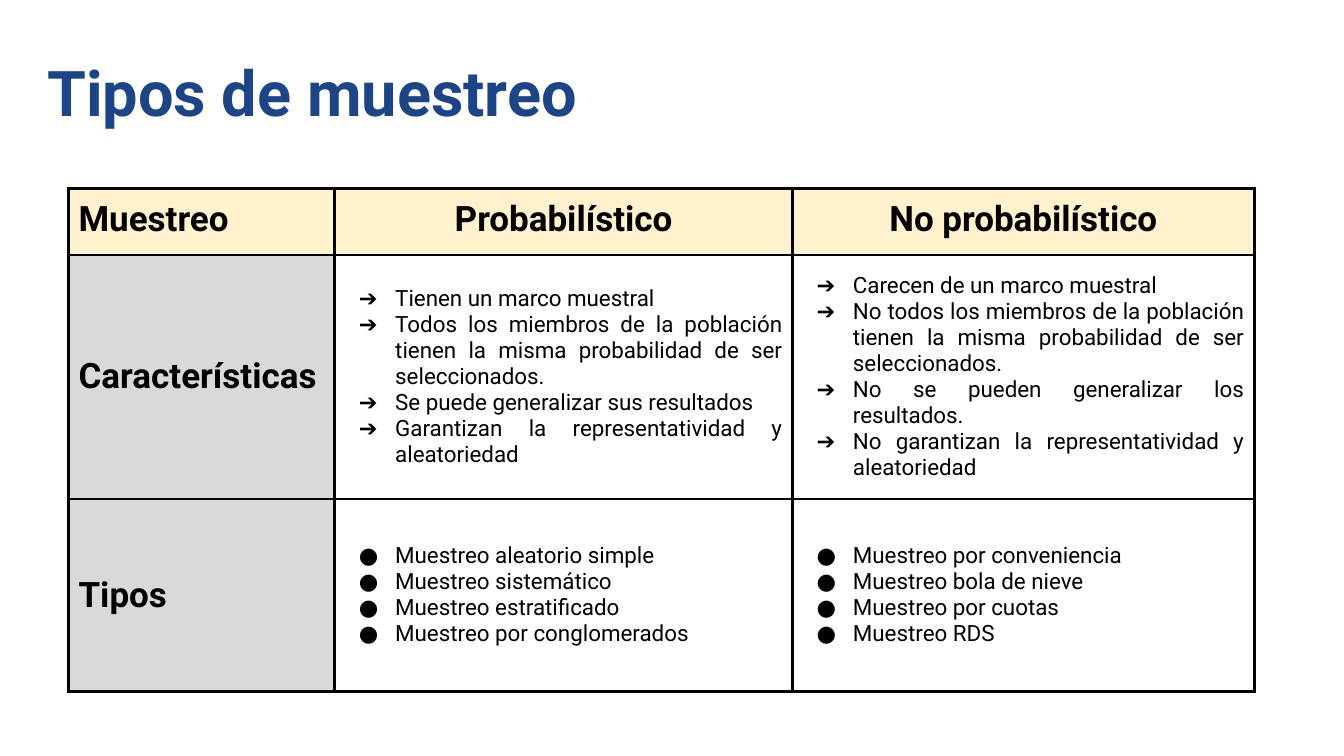
from lxml.etree import SubElement
from pptx import Presentation
from pptx.dml.color import RGBColor
from pptx.enum.text import MSO_ANCHOR, PP_ALIGN
from pptx.oxml.ns import qn
from pptx.util import Inches, Pt

BLUE = RGBColor(0x1C, 0x45, 0x87)
BLACK = RGBColor(0x00, 0x00, 0x00)
CREAM = RGBColor(0xFF, 0xF2, 0xCC)
GREY = RGBColor(0xD9, 0xD9, 0xD9)

HEADERS = ["Muestreo", "Probabilístico", "No probabilístico"]
# Each body row: label, bullet, one list of items per column
BODY = [
    ("Características", "➔", [
        ["Tienen un marco muestral",
         "Todos los miembros de la población tienen la misma probabilidad de ser seleccionados.",
         "Se puede generalizar sus resultados",
         "Garantizan la representatividad y aleatoriedad"],
        ["Carecen de un marco muestral",
         "No todos los miembros de la población tienen la misma probabilidad de ser seleccionados.",
         "No se pueden generalizar los resultados.",
         "No garantizan la representatividad y aleatoriedad"],
    ]),
    ("Tipos", "●", [
        ["Muestreo aleatorio simple", "Muestreo sistemático",
         "Muestreo estratificado", "Muestreo por conglomerados"],
        ["Muestreo por conveniencia", "Muestreo bola de nieve",
         "Muestreo por cuotas", "Muestreo RDS"],
    ]),
]
COL_WIDTHS = [2.64, 4.54, 4.58]
ROW_HEIGHTS = [0.66, 2.42, 1.91]


class SlideBuilder:
    font = "Roboto"
    margin = Inches(0.1)
    border = Pt(2.25)

    def __init__(self, s):
        self.s = s

    def set_margins(self, target):
        target.margin_left = target.margin_right = self.margin
        target.margin_top = target.margin_bottom = self.margin

    def add_run(self, p, text, size, color=BLACK, bold=False):
        r = p.add_run()
        r.text = text
        r.font.name = self.font
        r.font.size = Pt(size)
        r.font.bold = bold
        r.font.color.rgb = color

    def title(self, text, left, top, width, height):
        sp = self.s.shapes.add_textbox(Inches(left), Inches(top), Inches(width), Inches(height))
        tf = sp.text_frame
        tf.word_wrap = True
        self.set_margins(tf)
        self.add_run(tf.paragraphs[0], text, 45, BLUE, bold=True)

    def table(self, left, top, col_widths, row_heights):
        frame = self.s.shapes.add_table(
            len(row_heights), len(col_widths), Inches(left), Inches(top),
            Inches(sum(col_widths)), Inches(sum(row_heights)))
        table = frame.table
        table.first_row = table.horz_banding = False
        for column, width in zip(table.columns, col_widths):
            column.width = Inches(width)
        for row, height in zip(table.rows, row_heights):
            row.height = Inches(height)
        return table

    def style_cell(self, cell, fill=None, anchor=MSO_ANCHOR.MIDDLE):
        """Set margins, anchor, borders on all four sides, and the fill."""
        self.set_margins(cell)
        cell.vertical_anchor = anchor
        tcPr = cell._tc.get_or_add_tcPr()
        for side in ("a:lnL", "a:lnR", "a:lnT", "a:lnB"):
            ln = SubElement(tcPr, qn(side), w=str(self.border))
            solid = SubElement(ln, qn("a:solidFill"))
            SubElement(solid, qn("a:srgbClr"), val=str(BLACK))
        if fill is None:
            cell.fill.background()
        else:
            cell.fill.solid()
            cell.fill.fore_color.rgb = fill

    def heading_cell(self, cell, text, fill, align=PP_ALIGN.LEFT, anchor=MSO_ANCHOR.MIDDLE):
        self.style_cell(cell, fill, anchor)
        p = cell.text_frame.paragraphs[0]
        p.alignment = align
        self.add_run(p, text, 25, bold=True)

    def list_cell(self, cell, items, bullet):
        self.style_cell(cell)
        tf = cell.text_frame
        for i, item in enumerate(items):
            p = tf.add_paragraph() if i else tf.paragraphs[0]
            p.alignment = PP_ALIGN.JUSTIFY
            pPr = p._p.get_or_add_pPr()
            pPr.set("marL", str(Inches(0.5)))
            pPr.set("indent", str(Inches(-0.36)))
            bullet_color = SubElement(pPr, qn("a:buClr"))
            SubElement(bullet_color, qn("a:srgbClr"), val=str(BLACK))
            SubElement(pPr, qn("a:buFont"), typeface=self.font)
            SubElement(pPr, qn("a:buChar"), char=bullet)
            self.add_run(p, item, 16)


def main():
    prs = Presentation()
    prs.slide_width = Inches(13.33)
    prs.slide_height = Inches(7.5)
    builder = SlideBuilder(prs.slides.add_slide(prs.slide_layouts[6]))

    builder.title("Tipos de muestreo", 0.37, 0.43, 12.63, 0.96)
    table = builder.table(0.68, 1.87, COL_WIDTHS, ROW_HEIGHTS)
    for col, header in enumerate(HEADERS):
        align = PP_ALIGN.CENTER if col else PP_ALIGN.LEFT
        builder.heading_cell(table.cell(0, col), header, CREAM, align, MSO_ANCHOR.TOP)
    for row, (label, bullet, lists) in enumerate(BODY, start=1):
        builder.heading_cell(table.cell(row, 0), label, GREY)
        for col, items in enumerate(lists, start=1):
            builder.list_cell(table.cell(row, col), items, bullet)

    prs.save("out.pptx")


if __name__ == "__main__":
    main()
